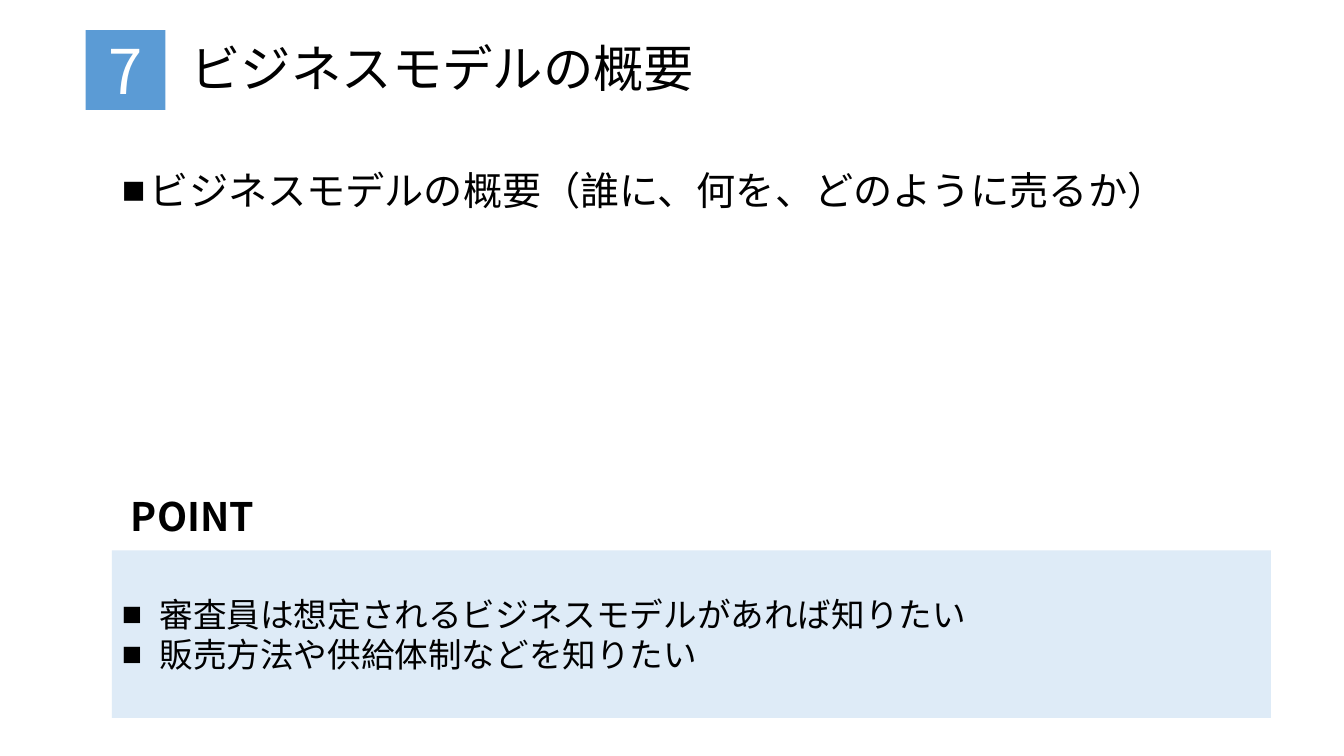
from dataclasses import dataclass
from typing import Optional

import pptx
import pptx.dml.color
import pptx.enum.shapes
import pptx.enum.text
import pptx.oxml.ns
import pptx.util
from lxml import etree

Cm = pptx.util.Cm
RGBColor = pptx.dml.color.RGBColor
Shape = pptx.enum.shapes.MSO_SHAPE
Align = pptx.enum.text.PP_ALIGN
Anchor = pptx.enum.text.MSO_ANCHOR
qn = pptx.oxml.ns.qn

BLUE = RGBColor(0x5B, 0x9B, 0xD5)
PALE_BLUE = RGBColor(0xDE, 0xEB, 0xF7)
BLACK = RGBColor(0, 0, 0)
WHITE = RGBColor(0xFF, 0xFF, 0xFF)
FONT = "Noto Sans CJK JP"
BULLET_FONT = "Arial"


@dataclass(frozen=True)
class Block:
    left: float
    top: float
    width: float
    height: float
    lines: tuple[str, ...]
    size: int
    color: RGBColor = BLACK
    fill: Optional[RGBColor] = None
    preset: Shape = Shape.RECTANGLE
    align: Align = Align.LEFT
    anchor: Anchor = Anchor.MIDDLE
    bold: bool = False
    line_spacing: float = 1.0
    space_before: int = 0
    bullet_indent: float = 0


BLOCKS = (
    Block(2.16, 0.76, 2.01, 2.01, ("7",), 44, WHITE, BLUE, align=Align.CENTER),
    Block(2.82, 4.19, 29.21, 8.13,
          ("ビジネスモデルの概要（誰に、何を、どのように売るか）",), 28,
          anchor=Anchor.TOP, line_spacing=0.9, space_before=10, bullet_indent=0.71),
    Block(4.55, 0.76, 26.82, 2.08, ("ビジネスモデルの概要",), 36, line_spacing=0.9),
    Block(2.82, 13.87, 29.21, 4.22,
          ("審査員は想定されるビジネスモデルがあれば知りたい",
           "販売方法や供給体制などを知りたい"), 24,
          fill=PALE_BLUE, preset=Shape.ROUNDED_RECTANGLE, bullet_indent=0.95),
    Block(2.49, 12.27, 4.72, 1.45, ("POINT",), 28,
          align=Align.CENTER, anchor=Anchor.TOP, bold=True),
)


def add_bullet(para: pptx.text.text._Paragraph, indent: float) -> None:
    properties = para._p.get_or_add_pPr()
    properties.set("marL", str(Cm(indent)))
    properties.set("indent", str(-Cm(indent)))
    etree.SubElement(properties, qn("a:buFont"), typeface=BULLET_FONT)
    etree.SubElement(properties, qn("a:buChar"), char="■")


def write_line(para: pptx.text.text._Paragraph, text: str, block: Block) -> None:
    para.alignment = block.align
    para.line_spacing = block.line_spacing
    para.space_before = pptx.util.Pt(block.space_before)
    if block.bullet_indent:
        add_bullet(para, block.bullet_indent)
    para.font.size = pptx.util.Pt(block.size)
    para.font.bold = block.bold
    para.font.color.rgb = block.color
    para.font.name = FONT
    span = para.add_run()
    span.text = text
    etree.SubElement(span._r.get_or_add_rPr(), qn("a:ea"), typeface=FONT)


def draw_block(page: pptx.slide.Slide, block: Block) -> None:
    place = [Cm(n) for n in (block.left, block.top, block.width, block.height)]
    if block.fill is None:
        box = page.shapes.add_textbox(*place)
    else:
        box = page.shapes.add_shape(block.preset, *place)
        box.shadow.inherit = False
        box.fill.solid()
        box.fill.fore_color.rgb = block.fill
        box.line.fill.background()
        if block.preset == Shape.ROUNDED_RECTANGLE:
            box.adjustments[0] = 0
    frame = box.text_frame
    frame.word_wrap = True
    frame.vertical_anchor = block.anchor
    for index, text in enumerate(block.lines):
        para = frame.add_paragraph() if index else frame.paragraphs[0]
        write_line(para, text, block)


def main() -> None:
    deck = pptx.Presentation()
    deck.slide_width = Cm(33.87)
    deck.slide_height = Cm(19.05)
    page = deck.slides.add_slide(deck.slide_layouts[6])
    for block in BLOCKS:
        draw_block(page, block)
    deck.save("out.pptx")


if __name__ == "__main__":
    main()
